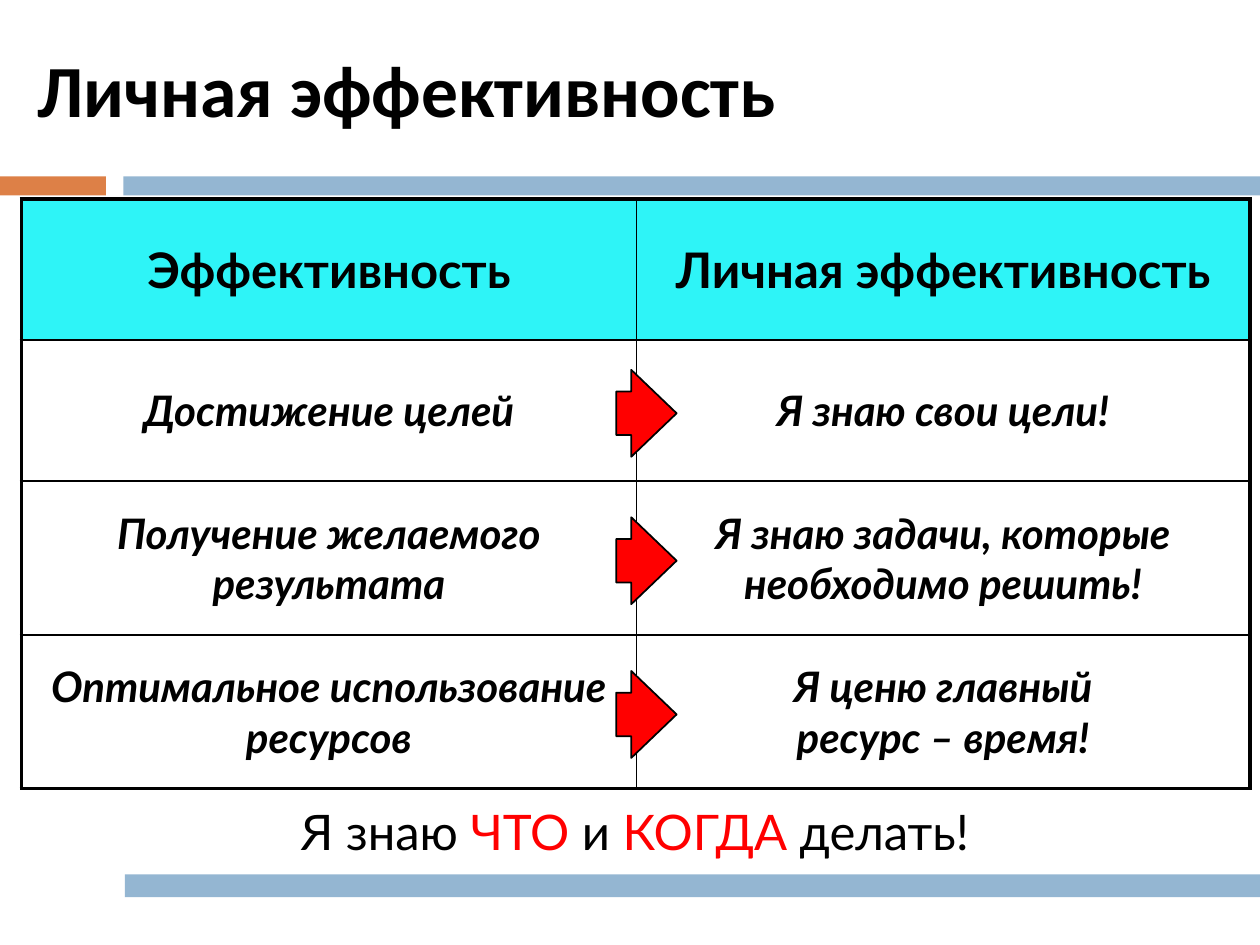
"""Build a slide that pairs effectiveness with personal effectiveness."""
from lxml import etree
from pptx import Presentation
from pptx import util as u
from pptx.dml.color import RGBColor
from pptx.enum import shapes, text
from pptx.oxml.ns import qn

W, H = 10, 7.5
COLORS = {"black": "000000", "red": "FF0000", "cyan": "2EF4F7",
          "orange": "DD8047", "blue": "94B6D2"}
TITLE = "Личная эффективность"
ROWS = [
    ("Эффективность", "Личная эффективность"),
    ("Достижение целей", "Я знаю свои цели!"),
    ("Получение желаемого результата", "Я знаю задачи, которые необходимо решить!"),
    ("Оптимальное использование ресурсов", "Я ценю главный\nресурс – время!"),
]
SUMMARY = [("Я знаю ", "black"), ("ЧТО", "red"), (" и ", "black"),
           ("КОГДА", "red"), (" делать!", "black")]
BARS = [(0, 1.4, 0.84, 0.15, "orange"), (0.98, 1.4, W - 0.98, 0.15, "blue"),
        (0.99, 6.94, W - 0.99, 0.18, "blue")]
LEFT, TOP = 0.17, 1.58
COLS, HEIGHTS = [4.88, 4.87], [1.12, 1.12, 1.22, 1.22]
ARROW_W, ARROW_H = 0.48, 0.69
THIN, THICK = 1, 2.25


def rgb(name):
    return RGBColor.from_string(COLORS[name])


def box(at):
    return [u.Inches(v) for v in at]


def add_shape(s, kind, at, fill, line=None):
    sp = s.shapes.add_shape(kind, *box(at))
    sp.shadow.inherit = False
    sp.fill.solid()
    sp.fill.fore_color.rgb = rgb(fill)
    if line:
        sp.line.color.rgb = rgb(line)
        sp.line.width = u.Pt(THIN)
    else:
        sp.line.fill.background()
    return sp


def style(p, size, name, bold=False, italic=False, color="black"):
    for r in p.runs:
        f = r.font
        f.size, f.name, f.bold, f.italic = u.Pt(size), name, bold, italic
        f.color.rgb = rgb(color)


def add_text(s, at, anchor):
    tf = s.shapes.add_textbox(*box(at)).text_frame
    tf.word_wrap = True
    tf.vertical_anchor = anchor
    return tf.paragraphs[0]


def set_borders(cell, widths):
    tc_pr = cell._tc.get_or_add_tcPr()
    for side, width in widths.items():
        ln = etree.SubElement(tc_pr, qn(f"a:ln{side}"), w=str(u.Pt(width)))
        fill = etree.SubElement(ln, qn("a:solidFill"))
        etree.SubElement(fill, qn("a:srgbClr"), val=COLORS["black"])


def add_table(s):
    at = box((LEFT, TOP, sum(COLS), sum(HEIGHTS)))
    table = s.shapes.add_table(len(ROWS), len(COLS), *at).table
    table.first_row = table.horz_banding = False
    for col, width in zip(table.columns, COLS):
        col.width = u.Inches(width)
    for i, (row, height) in enumerate(zip(ROWS, HEIGHTS)):
        table.rows[i].height = u.Inches(height)
        for j, words in enumerate(row):
            cell = table.cell(i, j)
            edges = {"L": j == 0, "R": j == len(COLS) - 1,
                     "T": i == 0, "B": i == len(ROWS) - 1}
            set_borders(cell, {k: THICK if outer else THIN for k, outer in edges.items()})
            if i == 0:
                cell.fill.solid()
                cell.fill.fore_color.rgb = rgb("cyan")
            else:
                cell.fill.background()
            cell.vertical_anchor = text.MSO_ANCHOR.MIDDLE
            p = cell.text_frame.paragraphs[0]
            p.text = words
            p.alignment = text.PP_ALIGN.CENTER
            style(p, 24 if i else 28, "Lato", bold=True, italic=i > 0)


def main():
    prs = Presentation()
    prs.slide_width, prs.slide_height = u.Inches(W), u.Inches(H)
    s = prs.slides.add_slide(prs.slide_layouts[6])
    for *at, color in BARS:
        add_shape(s, shapes.MSO_SHAPE.RECTANGLE, at, color)
    add_table(s)

    p = add_text(s, (0.2, 0.16, 8.92, 1.08), text.MSO_ANCHOR.MIDDLE)
    p.text = TITLE
    style(p, 42, "Calibri", bold=True)

    for i in range(1, len(ROWS)):
        middle = TOP + sum(HEIGHTS[:i]) + HEIGHTS[i] / 2 + 0.02
        at = (4.89, middle - ARROW_H / 2, ARROW_W, ARROW_H)
        sp = add_shape(s, shapes.MSO_SHAPE.RIGHT_ARROW, at, "red", "black")
        sp.adjustments[0], sp.adjustments[1] = 0.5, 0.75

    p = add_text(s, (1.06, 6.31, 7.96, 0.57), text.MSO_ANCHOR.TOP)
    p.alignment = text.PP_ALIGN.CENTER
    for words, color in SUMMARY:
        r = p.add_run()
        r.text = words
        r.font.size, r.font.name = u.Pt(28), "Lato"
        r.font.color.rgb = rgb(color)
    prs.save("out.pptx")


if __name__ == "__main__":
    main()
